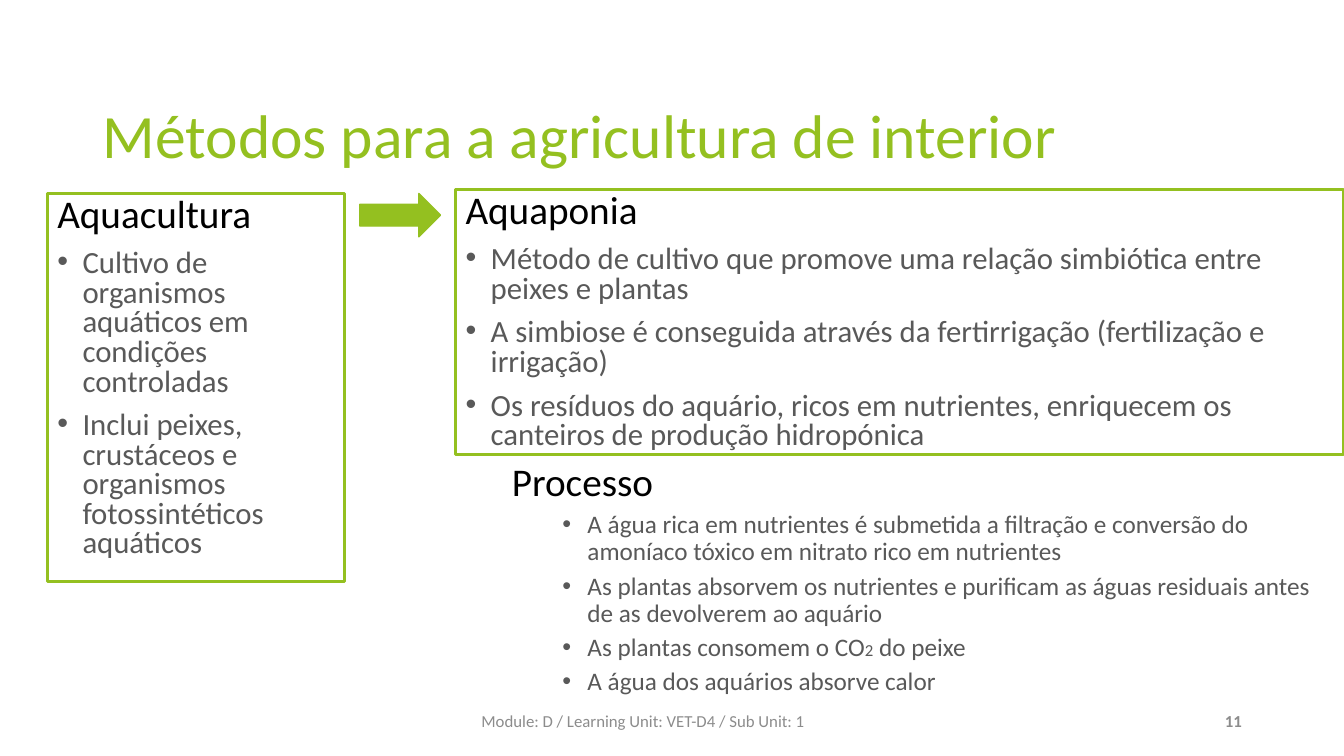
from dataclasses import dataclass

from lxml import etree
from pptx import Presentation
from pptx.dml.color import RGBColor
from pptx.enum.shapes import MSO_SHAPE
from pptx.enum.text import MSO_ANCHOR, PP_ALIGN
from pptx.oxml.ns import qn
from pptx.util import Pt

GREEN = RGBColor(0x94, 0xC0, 0x20)
BLACK = RGBColor(0x00, 0x00, 0x00)
DARK_GRAY = RGBColor(0x59, 0x59, 0x59)
FOOTER_GRAY = RGBColor(0x8C, 0x8C, 0x8C)
RIGHT_ARROW = MSO_SHAPE.RIGHT_ARROW
TOP, MIDDLE = MSO_ANCHOR.TOP, MSO_ANCHOR.MIDDLE
LEFT, CENTER, RIGHT = PP_ALIGN.LEFT, PP_ALIGN.CENTER, PP_ALIGN.RIGHT
FONT_NAME = "Calibri"
HEADING_SIZE = 28
HANGING_INDENT = 18
SUBSCRIPT_SIZE = 12


@dataclass(frozen=True)
class Box:
    left: float
    top: float
    width: float
    height: float

    def lengths(self) -> tuple[Pt, Pt, Pt, Pt]:
        return Pt(self.left), Pt(self.top), Pt(self.width), Pt(self.height)


@dataclass(frozen=True)
class Label:
    text: str
    box: Box
    size: float
    color: RGBColor
    alignment: PP_ALIGN = LEFT
    bold: bool = False
    line_spacing: float = 1.0


@dataclass(frozen=True)
class Panel:
    heading: str
    bullets: list[str]
    box: Box
    size: float
    line_spacing: float
    space_before: float
    text_indent: float = HANGING_INDENT
    outlined: bool = True


LABELS = [
    Label("Métodos para a agricultura de interior", Box(66.24, 64.08, 828, 69.12),
          44, GREEN, line_spacing=0.9),
    Label("Module: D / Learning Unit: VET-D4 / Sub Unit: 1",
          Box(66.24, 491.04, 786.24, 47.52), 12, FOOTER_GRAY, CENTER),
    Label("11", Box(858.24, 500.4, 36, 28.8), 12, FOOTER_GRAY, RIGHT, bold=True),
]

PANELS = [
    Panel("Aquacultura", [
        "Cultivo de organismos aquáticos em condições controladas",
        "Inclui peixes, crustáceos e organismos fotossintéticos aquáticos",
    ], Box(33.84, 138.24, 212.4, 277.2), 22, 0.8, 10),
    Panel("Aquaponia", [
        "Método de cultivo que promove uma relação simbiótica entre peixes e plantas",
        "A simbiose é conseguida através da fertirrigação (fertilização e irrigação)",
        "Os resíduos do aquário, ricos em nutrientes, enriquecem os canteiros "
        "de produção hidropónica",
    ], Box(325.44, 135.36, 634.32, 189.36), 22, 0.8, 10),
    Panel("Processo", [
        "A água rica em nutrientes é submetida a filtração e conversão do "
        "amoníaco tóxico em nitrato rico em nutrientes",
        "As plantas absorvem os nutrientes e purificam as águas residuais "
        "antes de as devolverem ao aquário",
        "As plantas consomem o CO|2| do peixe",
        "A água dos aquários absorve calor",
    ], Box(358.56, 326.88, 601.2, 189.36), 18, 0.9, 5, text_indent=54, outlined=False),
]

ARROW_BOX = Box(257.04, 138.24, 57.6, 30.96)


def add_text_box(slide, box: Box, anchor: MSO_ANCHOR):
    shape = slide.shapes.add_textbox(*box.lengths())
    shape.text_frame.word_wrap = True
    shape.text_frame.vertical_anchor = anchor
    return shape


def style_font(paragraph, size: float, color: RGBColor, bold: bool = False) -> None:
    paragraph.font.name = FONT_NAME
    paragraph.font.size = Pt(size)
    paragraph.font.bold = bold
    paragraph.font.color.rgb = color


def add_label(slide, label: Label) -> None:
    paragraph = add_text_box(slide, label.box, MIDDLE).text_frame.paragraphs[0]
    paragraph.text = label.text
    paragraph.alignment = label.alignment
    paragraph.line_spacing = label.line_spacing
    style_font(paragraph, label.size, label.color, label.bold)


def add_bullet(text_frame, text: str, panel: Panel) -> None:
    paragraph = text_frame.add_paragraph()
    properties = paragraph._p.get_or_add_pPr()
    properties.set("marL", str(Pt(panel.text_indent)))
    properties.set("indent", str(Pt(-HANGING_INDENT)))
    bullet_font = etree.SubElement(properties, qn("a:buFont"))
    bullet_font.set("typeface", "Arial")
    etree.SubElement(properties, qn("a:buChar")).set("char", "•")
    paragraph.line_spacing = panel.line_spacing
    paragraph.space_before = Pt(panel.space_before)
    style_font(paragraph, panel.size, DARK_GRAY)
    for index, part in enumerate(text.split("|")):
        run = paragraph.add_run()
        run.text = part
        if index % 2:
            run.font.size = Pt(SUBSCRIPT_SIZE)


def add_panel(slide, panel: Panel) -> None:
    shape = add_text_box(slide, panel.box, TOP)
    if panel.outlined:
        shape.line.color.rgb = GREEN
        shape.line.width = Pt(2.25)
    heading = shape.text_frame.paragraphs[0]
    heading.text = panel.heading
    heading.line_spacing = panel.line_spacing
    style_font(heading, HEADING_SIZE, BLACK)
    for bullet in panel.bullets:
        add_bullet(shape.text_frame, bullet, panel)


def add_arrow(slide, box: Box) -> None:
    arrow = slide.shapes.add_shape(RIGHT_ARROW, *box.lengths())
    arrow.shadow.inherit = False
    arrow.fill.solid()
    arrow.fill.fore_color.rgb = GREEN
    arrow.line.color.rgb = GREEN
    arrow.line.width = Pt(1)


def main() -> None:
    presentation = Presentation()
    presentation.slide_width = Pt(960)
    presentation.slide_height = Pt(540)
    slide = presentation.slides.add_slide(presentation.slide_layouts[6])
    for label in LABELS:
        add_label(slide, label)
    for panel in PANELS:
        add_panel(slide, panel)
    add_arrow(slide, ARROW_BOX)
    presentation.save("out.pptx")


if __name__ == "__main__":
    main()
